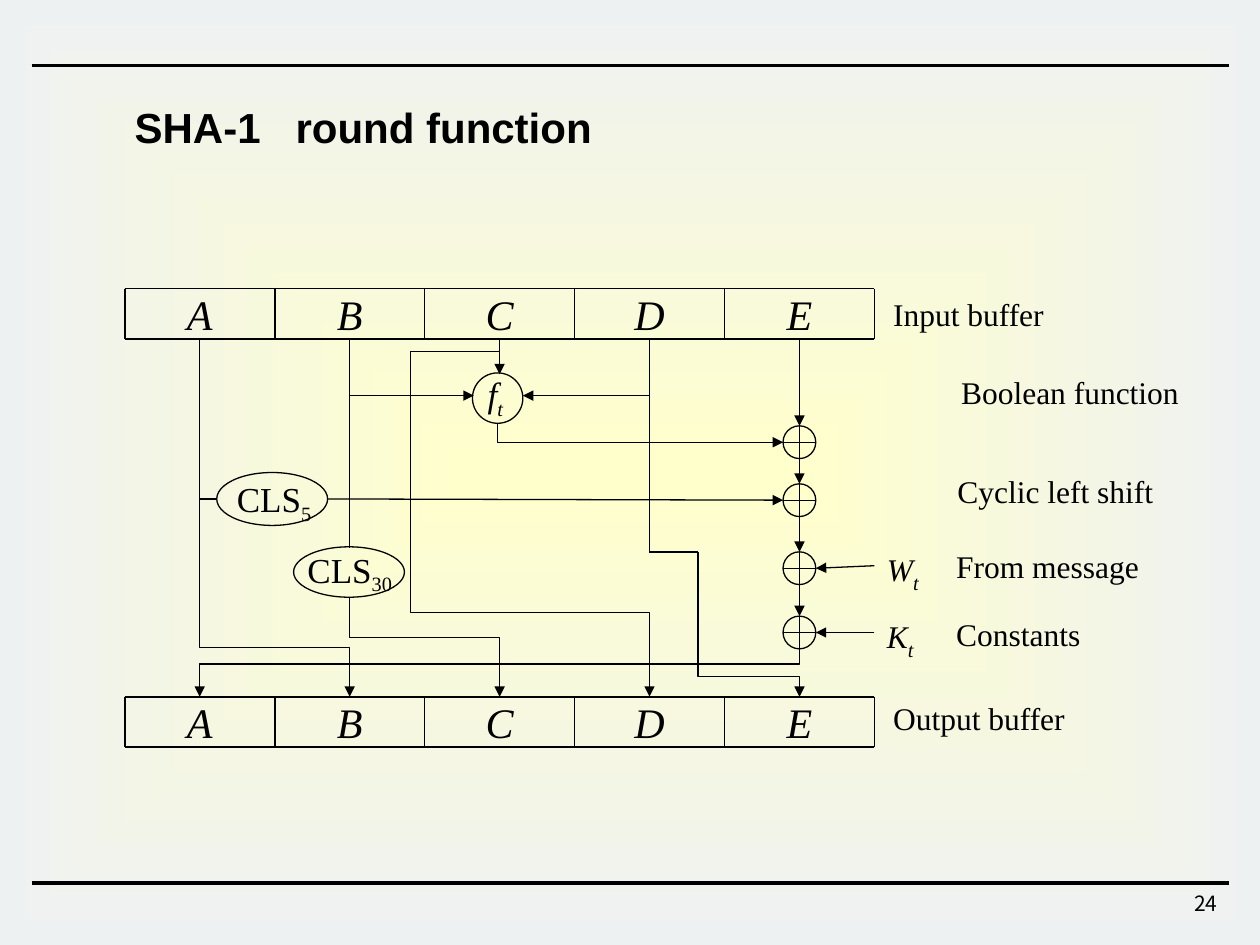
from lxml import etree
from pptx import Presentation
from pptx.dml.color import RGBColor
from pptx.enum.shapes import MSO_CONNECTOR, MSO_SHAPE
from pptx.enum.text import MSO_ANCHOR, MSO_AUTO_SIZE, PP_ALIGN
from pptx.oxml.ns import qn
from pptx.util import Inches, Pt

STRAIGHT, ELBOW = MSO_CONNECTOR.STRAIGHT, MSO_CONNECTOR.ELBOW
RECTANGLE, OVAL, XOR = MSO_SHAPE.RECTANGLE, MSO_SHAPE.OVAL, MSO_SHAPE.FLOWCHART_OR
CENTER, RIGHT = PP_ALIGN.CENTER, PP_ALIGN.RIGHT
TOP, MIDDLE = MSO_ANCHOR.TOP, MSO_ANCHOR.MIDDLE
GROW = MSO_AUTO_SIZE.SHAPE_TO_FIT_TEXT
BOTTOM_SITE, LEFT_SITE = 2, 1

COLORS = {"ink": "000000", "glow": "FFFFCC", "edge": "EEF1F2"}
SERIF = "Times New Roman"
WIDTH, HEIGHT = 10, 7.5

# Grid of the two buffers
WORDS = "ABCDE"
GRID_LEFT, CELL_WIDTH, CELL_HEIGHT = 0.99, 1.19, 0.4
INPUT_TOP, OUTPUT_TOP = 2.29, 5.53
INPUT_BOTTOM = INPUT_TOP + CELL_HEIGHT
GRID_RIGHT = GRID_LEFT + len(WORDS) * CELL_WIDTH
CENTERS = {word: GRID_LEFT + (i + 0.5) * CELL_WIDTH for i, word in enumerate(WORDS)}
A, B, C, D, E = CENTERS.values()

# Rows of the round
FUNCTION_ROW, SHIFT_ROW = 3.16, 3.96
XOR_SIZE, XOR_ROWS = 0.26, (3.51, 3.97, 4.51, 5.02)
XOR_LEFT, XOR_RIGHT = E - XOR_SIZE / 2, E + XOR_SIZE / 2
C_BRANCH, D_BRANCH = 3.26, 5.54
C_TURN, D_TURN = 2.79, 4.38

# Left, top, width, text
LABELS = [
    (6.99, 2.29, 1.4, "Input buffer"),
    (6.99, 5.5, 1.57, "Output buffer"),
    (7.53, 2.91, 1.93, "Boolean function"),
    (7.5, 3.7, 1.76, "Cyclic left shift"),
    (7.49, 4.29, 1.65, "From message"),
    (7.49, 4.83, 1.25, "Constants"),
]
# Oval left, top, width, height; text left, top; text, subscript, italic
OPERATIONS = [
    (3.75, 2.96, 0.4, 0.4, 3.87, 2.96, "f", "t", True),
    (1.72, 3.75, 0.88, 0.42, 1.88, 3.79, "CLS", "5", False),
    (2.33, 4.34, 0.88, 0.4, 2.44, 4.35, "CLS", "30", False),
]
# Name, top, width, row of the sum it enters
ROUND_INPUTS = [("W", 4.29, 0.46, XOR_ROWS[2]), ("K", 4.82, 0.42, XOR_ROWS[3])]
# Start, end, arrowhead
WIRES = [
    ((2.6, SHIFT_ROW), (XOR_LEFT, XOR_ROWS[1]), True),
    ((A, SHIFT_ROW), (1.72, SHIFT_ROW), False),
    ((C, C_TURN), (C_BRANCH, C_TURN), False),
    ((B, 3.14), (3.76, 3.14), True),
    ((D, 3.14), (4.15, 3.14), True),
    ((D, D_TURN), (D_BRANCH, D_TURN), False),
]
# Word, end of the wire that drops from it, arrowhead
DROPS = [("B", 4.35, False), ("C", 2.97, True), ("D", D_TURN, False),
         ("E", XOR_ROWS[0] - XOR_SIZE / 2, True)]
# Start, end, share of the height where the wire turns (None: turns once, at the end)
BENDS = [
    ((A, INPUT_BOTTOM), (B, OUTPUT_TOP), 0.863),
    ((B, 4.74), (C, OUTPUT_TOP), 0.408),
    ((C_BRANCH, C_TURN), (D, OUTPUT_TOP), 0.756),
    ((3.95, 3.36), (XOR_LEFT, XOR_ROWS[0]), None),
    ((E, XOR_ROWS[3] + XOR_SIZE / 2), (A, OUTPUT_TOP), 0.315),
    ((D_BRANCH, D_TURN), (E, OUTPUT_TOP), 0.861),
]


def color(name):
    return RGBColor.from_string(COLORS[name])


def add_text(slide, left, top, width, height, text, size=18, font=SERIF, subscript="",
             italic=False, bold=False, align=None, anchor=TOP, wrap=False, inset=True):
    box = slide.shapes.add_textbox(*map(Inches, (left, top, width, height)))
    frame = box.text_frame
    frame.text = text
    frame.word_wrap = wrap
    frame.vertical_anchor = anchor
    if not wrap:
        frame.auto_size = GROW
    if not inset:
        frame.margin_left = frame.margin_right = frame.margin_top = frame.margin_bottom = 0
    paragraph = frame.paragraphs[0]
    paragraph.alignment = align
    if subscript:
        paragraph.add_run().text = subscript
    for run in paragraph.runs:
        run.font.name, run.font.size = font, Pt(size)
        run.font.italic, run.font.bold = italic, bold
        run.font.color.rgb = color("ink")
    if subscript:
        run.font.size = Pt(20)
        run.font._element.set("baseline", "-25000")
    return box


def add_line(slide, start, end, weight=0.75, arrow=False, kind=STRAIGHT):
    line = slide.shapes.add_connector(kind, *map(Inches, (*start, *end)))
    line.line.color.rgb = color("ink")
    line.line.width = Pt(weight)
    if arrow:
        etree.SubElement(line.line._get_or_add_ln(), qn("a:tailEnd"), type="triangle")
    etree.SubElement(line._element.spPr, qn("a:effectLst"))
    return line


def add_bend(slide, start, end, turn):
    """Elbow wire that leaves downwards: a sideways elbow turned by 90 degrees."""
    (x1, y1), (x2, y2) = start, end
    length, breadth = y2 - y1, abs(x2 - x1)
    line = add_line(slide, start, end, arrow=True, kind=ELBOW)
    line.left = Inches((x1 + x2 - length) / 2)
    line.top = Inches((y1 + y2 - breadth) / 2)
    line.width, line.height = Inches(length), Inches(breadth)
    transform = line._element.spPr.find(qn("a:xfrm"))
    transform.set("rot", "5400000")
    transform.set("flipH", "0")
    transform.set("flipV", "1" if x2 > x1 else "0")
    geometry = line._element.spPr.find(qn("a:prstGeom"))
    if turn is None:
        geometry.set("prst", "bentConnector2")
    else:
        etree.SubElement(geometry.find(qn("a:avLst")), qn("a:gd"),
                         name="adj1", fmla=f"val {round(turn * 100000)}")


def add_outline(slide, kind, left, top, width, height):
    shape = slide.shapes.add_shape(kind, *map(Inches, (left, top, width, height)))
    shape.shadow.inherit = False
    shape.fill.background()
    shape.line.color.rgb = color("ink")
    shape.line.width = Pt(0.75)
    return shape


def add_backdrop(slide):
    backdrop = add_outline(slide, RECTANGLE, 0, 0, WIDTH, HEIGHT)
    backdrop.line.fill.background()
    backdrop.fill.gradient()
    for stop, name in zip(backdrop.fill.gradient_stops, ("glow", "edge")):
        stop.color.rgb = color(name)
    gradient = backdrop._element.spPr.find(qn("a:gradFill"))
    linear = gradient.find(qn("a:lin"))
    shape_path = etree.Element(qn("a:path"), path="shape")
    etree.SubElement(shape_path, qn("a:fillToRect"), l="50000", t="50000", r="50000", b="50000")
    gradient.replace(linear, shape_path)


def add_buffer(slide, top):
    """Draw a row of words with its grid lines; return the boxes by word."""
    boxes = {}
    for word, center in CENTERS.items():
        boxes[word] = add_text(slide, center - CELL_WIDTH / 2, top, CELL_WIDTH, CELL_HEIGHT, word,
                               24, italic=True, align=CENTER, anchor=MIDDLE, wrap=True)
        boxes[word].text_frame.paragraphs[0].space_before = Pt(5)
    bottom = top + CELL_HEIGHT
    for y in (top, bottom):
        add_line(slide, (GRID_LEFT, y), (GRID_RIGHT, y), 1)
    for column in range(len(WORDS) + 1):
        x = GRID_LEFT + column * CELL_WIDTH
        add_line(slide, (x, top), (x, bottom), 1)
    return boxes


def main():
    presentation = Presentation()
    presentation.slide_width, presentation.slide_height = Inches(WIDTH), Inches(HEIGHT)
    slide = presentation.slides.add_slide(presentation.slide_layouts[6])

    add_backdrop(slide)
    for y in (0.52, 7.01):
        add_line(slide, (0.25, y), (9.75, y), 2)
    add_text(slide, 7.68, 7.02, 2.08, 0.33, "24", 12, "Noto Sans CJK KR", align=RIGHT, wrap=True)
    add_text(slide, 0.97, 0.76, 4.01, 0.5, "SHA-1   round function", 24, "Arial", bold=True)

    inputs = add_buffer(slide, INPUT_TOP)
    add_buffer(slide, OUTPUT_TOP)
    for left, top, width, text in LABELS:
        add_text(slide, left, top, width, 0.4, text)

    for left, top, width, height, text_left, text_top, text, subscript, italic in OPERATIONS:
        add_outline(slide, OVAL, left, top, width, height)
        add_text(slide, text_left, text_top, left + width - text_left, 0.33, text, 20,
                 subscript=subscript, italic=italic, inset=False)
    for row in XOR_ROWS:
        add_outline(slide, XOR, XOR_LEFT, row - XOR_SIZE / 2, XOR_SIZE, XOR_SIZE)
    for upper, lower in zip(XOR_ROWS, XOR_ROWS[1:]):
        add_line(slide, (E, upper + XOR_SIZE / 2), (E, lower - XOR_SIZE / 2), arrow=True)

    for start, end, arrow in WIRES:
        add_line(slide, start, end, arrow=arrow)
    for word, y, arrow in DROPS:
        drop = add_line(slide, (CENTERS[word], INPUT_BOTTOM), (CENTERS[word], y), arrow=arrow)
        drop.begin_connect(inputs[word], BOTTOM_SITE)
    for start, end, turn in BENDS:
        add_bend(slide, start, end, turn)
    for name, top, width, row in ROUND_INPUTS:
        box = add_text(slide, GRID_RIGHT, top, width, 0.4, name, subscript="t", italic=True)
        wire = add_line(slide, (GRID_RIGHT, top + 0.2), (XOR_RIGHT, row), arrow=True)
        wire.begin_connect(box, LEFT_SITE)

    presentation.save("out.pptx")


if __name__ == "__main__":
    main()
